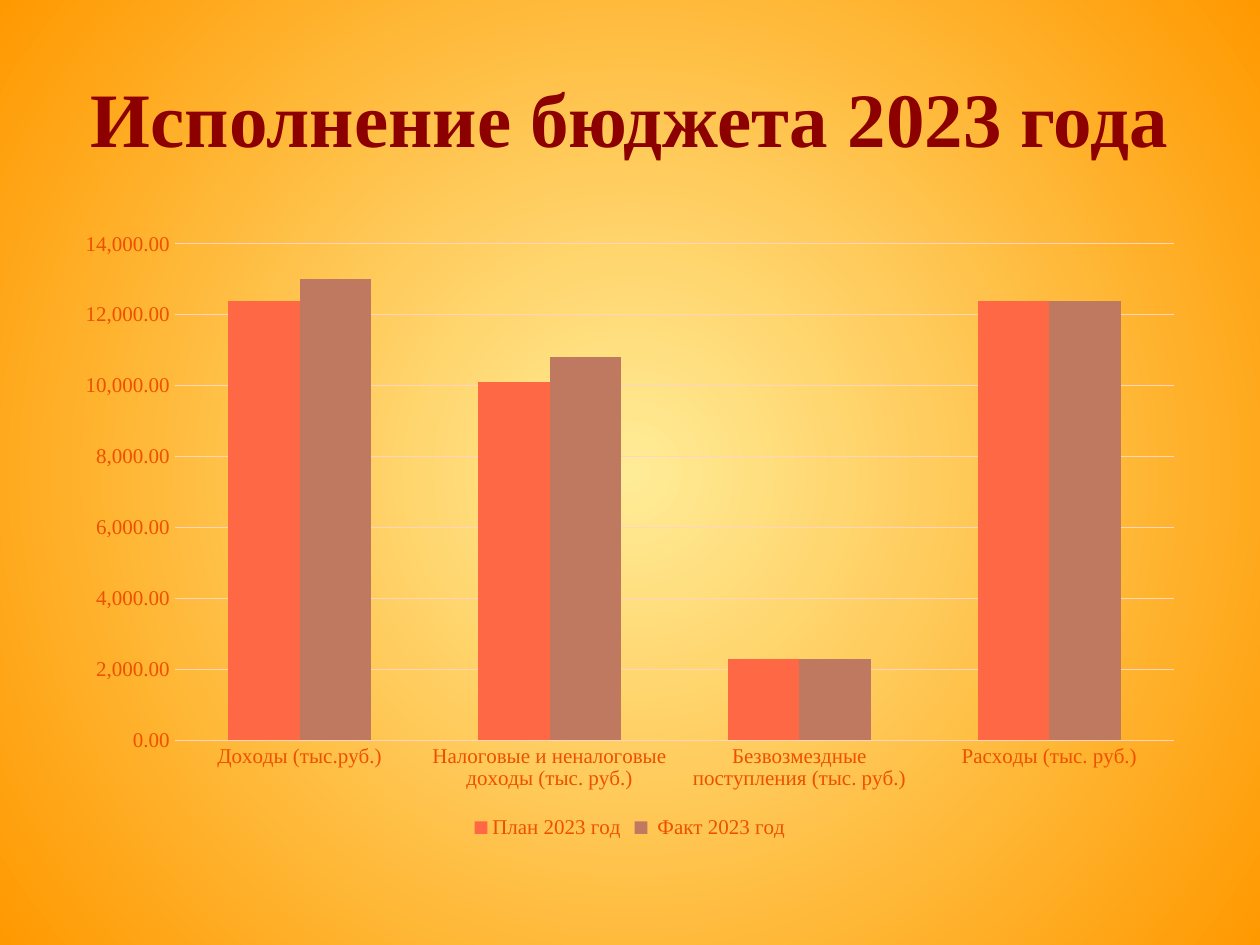
"""Build a slide with a column chart comparing the planned and actual 2023 budget."""
from lxml.etree import SubElement
from pptx import Presentation
from pptx.chart.data import CategoryChartData
from pptx.dml.color import RGBColor
from pptx.enum.chart import XL_CHART_TYPE, XL_LEGEND_POSITION, XL_TICK_MARK
from pptx.enum.text import MSO_ANCHOR, PP_ALIGN
from pptx.oxml.ns import qn
from pptx.util import Inches, Pt

TITLE = "Исполнение бюджета 2023 года"
CATEGORIES = [
    "Доходы (тыс.руб.)",
    "Налоговые и неналоговые доходы (тыс. руб.)",
    "Безвозмездные поступления (тыс. руб.)",
    "Расходы (тыс. руб.)",
]
SERIES = [
    ("План 2023 год", "plan", [12400, 10100, 2300, 12400]),
    (" Факт 2023 год", "actual", [13000, 10800, 2300, 12400]),
]
COLORS = {
    "center": "FFEC97", "edge": "FF9900", "title": "8C0000", "text": "5C1F00",
    "label": "EE5000", "grid": "FFD5C0", "plan": "FF6845", "actual": "BE7960",
}
FONT = "Times New Roman"
WIDTH, HEIGHT = Inches(10), Inches(7.5)
MARGIN = 0.05
TITLE_BAND = (0.04, 0.167)
CHART_BAND = (0.233, 0.66)


def color(name):
    return RGBColor.from_string(COLORS[name])


def place(band):
    top, height = band
    return [int(WIDTH * MARGIN), int(HEIGHT * top),
            int(WIDTH * (1 - 2 * MARGIN)), int(HEIGHT * height)]


def style(font, size, name):
    font.name, font.size = FONT, Pt(size)
    font.color.rgb = color(name)


def paint_background(page):
    fill = page.background.fill
    fill.gradient()
    for stop, name in zip(fill.gradient_stops, ("center", "edge")):
        stop.color.rgb = color(name)
    gradient = page._element.find(".//" + qn("a:gradFill"))
    gradient.remove(gradient.find(qn("a:lin")))
    route = SubElement(gradient, qn("a:path"), path="circle")
    SubElement(route, qn("a:fillToRect"), {side: "50000" for side in "ltrb"})


def add_title(page):
    box = page.shapes.add_textbox(*place(TITLE_BAND))
    frame = box.text_frame
    frame.word_wrap = True
    frame.vertical_anchor = MSO_ANCHOR.MIDDLE
    para = frame.paragraphs[0]
    para.alignment = PP_ALIGN.CENTER
    span = para.add_run()
    span.text = TITLE
    span.font.bold = True
    style(span.font, 44, "title")


def add_budget_chart(page):
    data = CategoryChartData(number_format="#,##0.00")
    data.categories = CATEGORIES
    for name, _, values in SERIES:
        data.add_series(name, values)
    chart = page.shapes.add_chart(
        XL_CHART_TYPE.COLUMN_CLUSTERED, *place(CHART_BAND), data).chart
    style(chart.font, 10, "text")
    chart.has_title = False

    plot = chart.plots[0]
    plot.gap_width, plot.overlap, plot.vary_by_categories = 150, 0, False
    for series, (_, name, _) in zip(plot.series, SERIES):
        series.format.fill.solid()
        series.format.fill.fore_color.rgb = color(name)

    for axis in (chart.category_axis, chart.value_axis):
        axis.major_tick_mark = axis.minor_tick_mark = XL_TICK_MARK.NONE
        axis.format.line.fill.background()
        style(axis.tick_labels.font, 12, "label")
    scale = chart.value_axis
    scale.minimum_scale, scale.maximum_scale, scale.major_unit = 0, 14000, 2000
    scale.tick_labels.number_format = "#,##0.00"
    scale.tick_labels.number_format_is_linked = False
    scale.has_major_gridlines = True
    scale.major_gridlines.format.line.color.rgb = color("grid")
    scale.major_gridlines.format.line.width = Pt(0.75)

    chart.has_legend = True
    chart.legend.position = XL_LEGEND_POSITION.BOTTOM
    chart.legend.include_in_layout = False
    style(chart.legend.font, 12, "label")


def main():
    deck = Presentation()
    deck.slide_width, deck.slide_height = WIDTH, HEIGHT
    page = deck.slides.add_slide(deck.slide_layouts[6])
    paint_background(page)
    add_title(page)
    add_budget_chart(page)
    deck.save("out.pptx")


if __name__ == "__main__":
    main()
